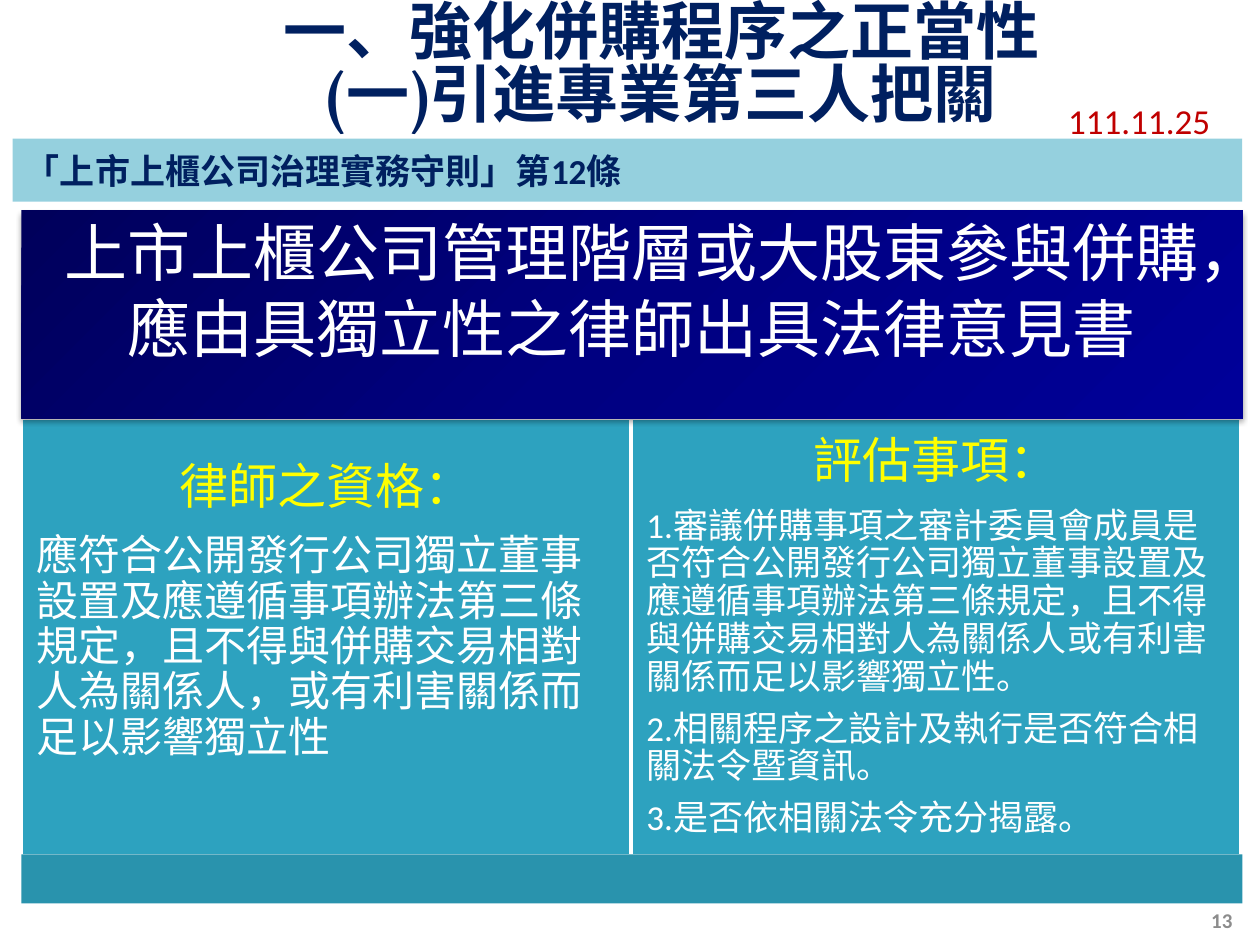
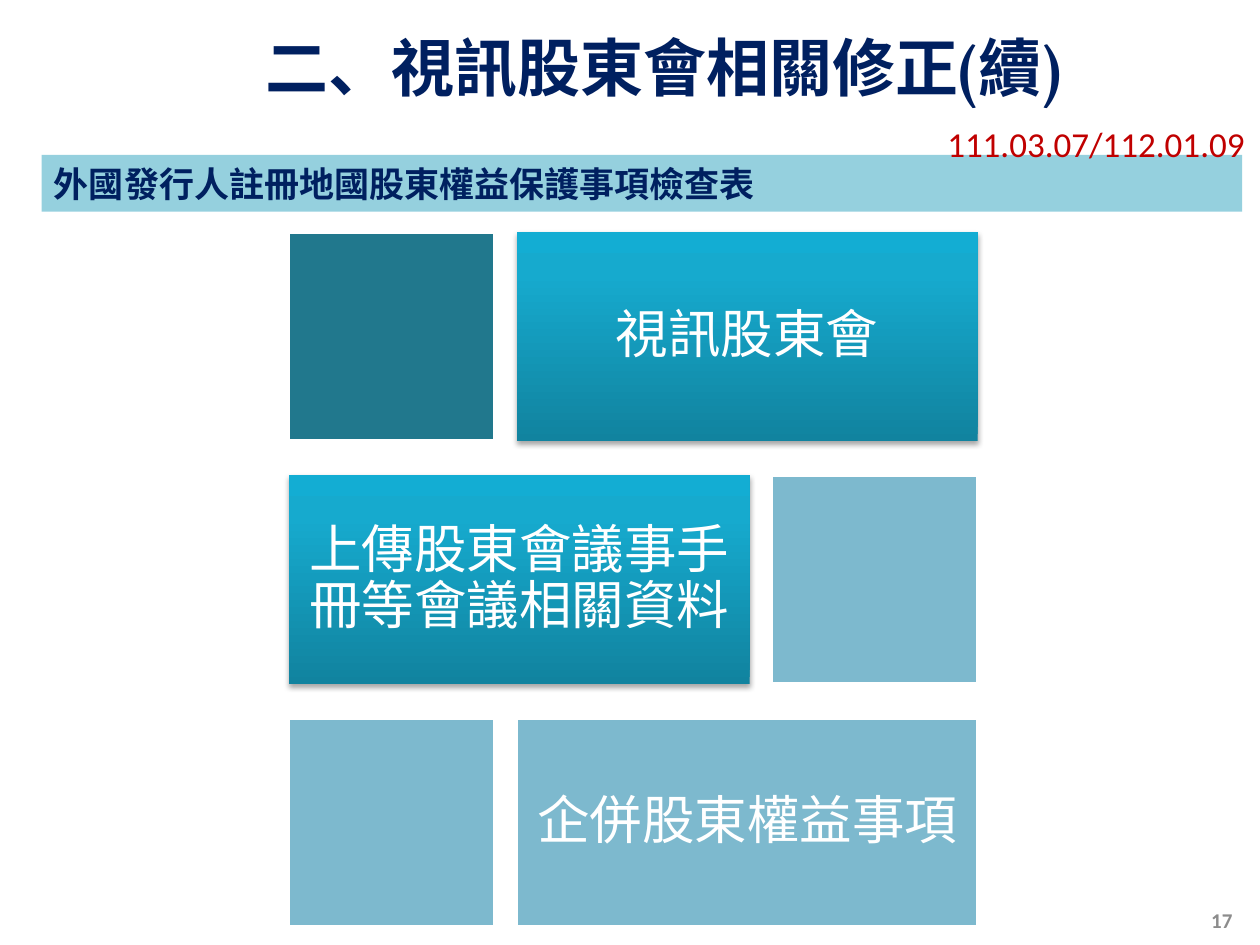
"""Build two slides on merger review and video shareholder meetings."""
from dataclasses import dataclass

from lxml import etree
from pptx import Presentation
from pptx.dml.color import RGBColor
from pptx.enum.shapes import MSO_SHAPE
from pptx.enum.text import MSO_ANCHOR, MSO_AUTO_SIZE, PP_ALIGN
from pptx.oxml.ns import qn
from pptx.util import Emu, Pt

RECT = MSO_SHAPE.RECTANGLE
MIDDLE, TOP = MSO_ANCHOR.MIDDLE, MSO_ANCHOR.TOP
LEFT, CENTER, RIGHT = PP_ALIGN.LEFT, PP_ALIGN.CENTER, PP_ALIGN.RIGHT
NO_FIT = MSO_AUTO_SIZE.NONE

PX = 9144
TWO_CONTENT, TITLE_ONLY = 3, 5
BODY_FONT, TITLE_FONT = "Calibri", "Vollkorn"

WHITE = RGBColor(0xFF, 0xFF, 0xFF)
NAVY = RGBColor(0x00, 0x20, 0x60)
RED = RGBColor(0xC0, 0x00, 0x00)
GREY = RGBColor(0x8C, 0x8C, 0x8C)
YELLOW = RGBColor(0xFF, 0xFF, 0x00)
TEAL = RGBColor(0x2D, 0xA2, 0xBF)
STRIP_TEAL = RGBColor(0x29, 0x93, 0xAD)
DARK_TEAL = RGBColor(0x21, 0x78, 0x8D)
PALE_TEAL = RGBColor(0x7D, 0xB9, 0xCE)
BLACK = RGBColor(0x00, 0x00, 0x00)


@dataclass(frozen=True)
class Box:
    x: int
    y: int
    w: int
    h: int

    def emu(self) -> tuple:
        return tuple(Emu(v * PX) for v in (self.x, self.y, self.w, self.h))


@dataclass(frozen=True)
class Gradient:
    stops: tuple
    angle: int


@dataclass(frozen=True)
class Header:
    title: str
    title_box: Box
    band: str
    band_box: Box
    date: str
    date_box: Box
    number: str
    spacing: Pt | None = None


@dataclass(frozen=True)
class Panel:
    heading: str
    items: tuple
    size: int
    bottom: int


@dataclass(frozen=True)
class Row:
    text: str
    wide: RGBColor | Gradient
    small: RGBColor


NAVY_BLEND = Gradient(((0, RGBColor(0x00, 0x00, 0x5B)),
                       (50, RGBColor(0x00, 0x00, 0x81)),
                       (100, RGBColor(0x00, 0x00, 0x99))), 315)
TEAL_BLEND = Gradient(((0, RGBColor(0x11, 0x83, 0x9F)),
                       (80, RGBColor(0x16, 0xAA, 0xCE)),
                       (100, RGBColor(0x13, 0xAD, 0xD3))), 90)

MERGER = Header(
    "一、強化併購程序之正當性\n(一)引進專業第三人把關", Box(50, 32, 950, 42),
    "「上市上櫃公司治理實務守則」第12條", Box(10, 110, 976, 50),
    "111.11.25", Box(838, 74, 150, 44), "13", Pt(36))
MEETING = Header(
    "二、視訊股東會相關修正(續)", Box(66, 32, 922, 42),
    "外國發行人註冊地國股東權益保護事項檢查表", Box(33, 123, 953, 45),
    "111.03.07/112.01.09", Box(742, 92, 283, 44), "17")
NUMBER_BOX = Box(925, 710, 63, 40)

OPINION = "上市上櫃公司管理階層或大股東參與併購，應由具獨立性之律師出具法律意見書"
PANELS = (
    Panel("律師之資格：",
          ("應符合公開發行公司獨立董事設置及應遵循事項辦法第三條規定，且不得與併購交易相對人為關係人，或有利害關係而足以影響獨立性",),
          24, 52),
    Panel("評估事項：",
          ("1.審議併購事項之審計委員會成員是否符合公開發行公司獨立董事設置及應遵循事項辦法第三條規定，且不得與併購交易相對人為關係人或有利害關係而足以影響獨立性。",
           "2.相關程序之設計及執行是否符合相關法令暨資訊。",
           "3.是否依相關法令充分揭露。"), 20, 12),
)
ROWS = (
    Row("視訊股東會", TEAL_BLEND, DARK_TEAL),
    Row("上傳股東會議事手冊等會議相關資料", TEAL_BLEND, PALE_TEAL),
    Row("企併股東權益事項", PALE_TEAL, PALE_TEAL),
)


def write(tf, text: str, *, size: int, color: RGBColor, font: str = BODY_FONT,
          bold: bool = False, align=LEFT, spacing=None, after: int = 0):
    """Add one formatted paragraph, reusing the empty first one."""
    p = tf.paragraphs[0]
    if p.runs:
        p = tf.add_paragraph()
    p.text = text
    p.alignment = align
    p.space_before, p.space_after = Pt(0), Pt(after)
    if spacing is not None:
        p.line_spacing = spacing
    for r in p.runs:
        r.font.name, r.font.size, r.font.bold = font, Pt(size), bold
        r.font.color.rgb = color
    return p


def set_frame(tf, anchor=MIDDLE, inset: int | None = None, bottom: int | None = None) -> None:
    """Set wrapping, anchor and insets of a text frame."""
    tf.word_wrap, tf.auto_size, tf.vertical_anchor = True, NO_FIT, anchor
    if inset is not None:
        tf.margin_left = tf.margin_right = tf.margin_top = Emu(inset * PX)
        tf.margin_bottom = Emu((inset if bottom is None else bottom) * PX)


def place(sp, box: Box) -> None:
    """Move a placeholder to a box."""
    sp.left, sp.top, sp.width, sp.height = box.emu()


def paint(sp, fill: RGBColor | Gradient, line: RGBColor | None = None) -> None:
    """Fill and outline a shape; gradients also cast a soft shadow."""
    sp.shadow.inherit = False
    if isinstance(fill, Gradient):
        sp.fill.gradient()
        sp.fill.gradient_angle = fill.angle
        stops = sp._element.spPr.find(".//" + qn("a:gsLst"))
        stops.clear()
        for pos, color in fill.stops:
            gs = etree.SubElement(stops, qn("a:gs"), pos=str(pos * 1000))
            etree.SubElement(gs, qn("a:srgbClr"), val=str(color))
        effects = sp._element.spPr.find(qn("a:effectLst"))
        shadow = etree.SubElement(effects, qn("a:outerShdw"), blurRad="40000",
                                  dist="23000", dir="5400000", rotWithShape="0")
        add_alpha(etree.SubElement(shadow, qn("a:srgbClr"), val=str(BLACK)), 35)
    else:
        sp.fill.solid()
        sp.fill.fore_color.rgb = fill
    if line is None:
        sp.line.fill.background()
    else:
        sp.line.color.rgb, sp.line.width = line, Pt(2)


def add_alpha(color, percent: int) -> None:
    """Give a colour element an opacity."""
    etree.SubElement(color, qn("a:alpha"), val=str(percent * 1000))


def add_rect(s, box: Box, fill: RGBColor | Gradient, line: RGBColor | None = None):
    """Add a painted rectangle."""
    sp = s.shapes.add_shape(RECT, *box.emu())
    paint(sp, fill, line)
    return sp


def add_label(s, box: Box, text: str, anchor=TOP, **fmt) -> None:
    """Add a one-paragraph text box."""
    tf = s.shapes.add_textbox(*box.emu()).text_frame
    set_frame(tf, anchor)
    write(tf, text, **fmt)


def add_slide(prs, layout: int, header: Header):
    """Add a slide with its title, band, date and number."""
    s = prs.slides.add_slide(prs.slide_layouts[layout])
    title = s.shapes.title
    place(title, header.title_box)
    set_frame(title.text_frame)
    write(title.text_frame, header.title, size=36, color=NAVY, font=TITLE_FONT,
          bold=True, align=CENTER, spacing=header.spacing)
    band = add_rect(s, header.band_box, TEAL)
    add_alpha(band._element.spPr.find(".//" + qn("a:srgbClr")), 50)
    set_frame(band.text_frame)
    write(band.text_frame, header.band, size=20, color=NAVY, bold=True)
    add_label(s, header.date_box, header.date, size=20, color=RED)
    add_label(s, NUMBER_BOX, header.number, MIDDLE, size=12, color=GREY,
              bold=True, align=RIGHT)
    return s


def fill_panel(sp, box: Box, panel: Panel) -> None:
    """Turn a body placeholder into a filled panel without bullets."""
    place(sp, box)
    paint(sp, TEAL, WHITE)
    tf = sp.text_frame
    set_frame(tf, inset=12, bottom=panel.bottom)
    write(tf, panel.heading, size=28, color=YELLOW, align=CENTER, spacing=0.9, after=11)
    for item in panel.items:
        write(tf, item, size=panel.size, color=WHITE, spacing=0.9, after=8)
    for p in tf.paragraphs:
        pPr = p._p.get_or_add_pPr()
        pPr.set("marL", "0")
        pPr.set("indent", "0")
        etree.SubElement(pPr, qn("a:buNone"))


def build_merger(prs) -> None:
    """Build the slide on third-party review of mergers."""
    s = add_slide(prs, TWO_CONTENT, MERGER)
    left, top, width = 17, 332, 969
    banner = add_rect(s, Box(left, 167, width, 165), NAVY_BLEND)
    set_frame(banner.text_frame, inset=15, bottom=55)
    write(banner.text_frame, OPINION, size=36, color=WHITE, align=CENTER)
    half = width // 2
    for i, panel in enumerate(PANELS):
        fill_panel(s.placeholders[i + 1], Box(left + i * half, top, half, 347), panel)
    add_rect(s, Box(left, 678, width, 39), STRIP_TEAL)


def build_meeting(prs) -> None:
    """Build the slide on video shareholder meetings."""
    s = add_slide(prs, TITLE_ONLY, MEETING)
    left, top, wide, small, gap, height, pitch = 229, 184, 366, 164, 17, 166, 193
    for i, row in enumerate(ROWS):
        y = top + i * pitch
        wide_x, small_x = (left, left + wide + gap) if i % 2 else (left + small + gap, left)
        line = None if isinstance(row.wide, Gradient) else WHITE
        sp = add_rect(s, Box(wide_x, y, wide, height), row.wide, line)
        set_frame(sp.text_frame, inset=12)
        write(sp.text_frame, row.text, size=30, color=WHITE, align=CENTER, spacing=0.9)
        add_rect(s, Box(small_x, y, small, height), row.small, WHITE)


def main() -> None:
    """Build and save the presentation."""
    prs = Presentation()
    prs.slide_width, prs.slide_height = Emu(1000 * PX), Emu(750 * PX)
    build_merger(prs)
    build_meeting(prs)
    prs.save("out.pptx")


if __name__ == "__main__":
    main()
